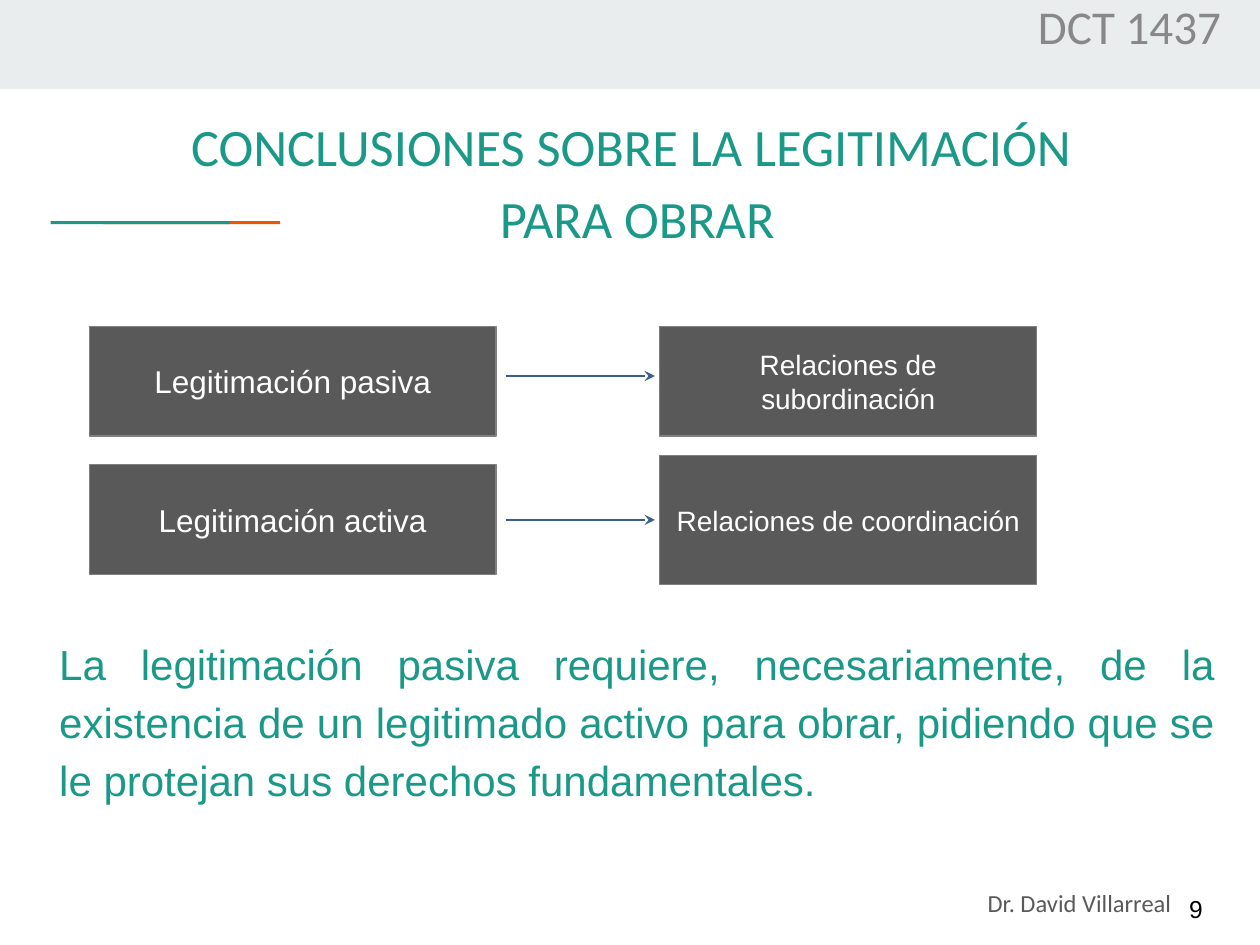
from lxml.etree import SubElement
from pptx import Presentation
from pptx.dml.color import RGBColor
from pptx.enum.shapes import MSO_CONNECTOR, MSO_SHAPE
from pptx.enum.text import MSO_ANCHOR, MSO_AUTO_SIZE, PP_ALIGN
from pptx.oxml.ns import qn
from pptx.util import Cm, Pt

TEAL = RGBColor(0x1A, 0x99, 0x88)
ORANGE = RGBColor(0xEB, 0x56, 0x00)
BAND = RGBColor(0xE9, 0xED, 0xEE)
DARK = RGBColor(0x59, 0x59, 0x59)
OUTLINE = RGBColor(0x80, 0x80, 0x80)
HEADER = RGBColor(0x88, 0x88, 0x88)
ARROW = RGBColor(0x39, 0x5E, 0x89)
WHITE = RGBColor(0xFF, 0xFF, 0xFF)
BLACK = RGBColor(0x00, 0x00, 0x00)


def add_rectangle(left, top, width, height, color):
    box = page.shapes.add_shape(
        MSO_SHAPE.RECTANGLE, Cm(left), Cm(top), Cm(width), Cm(height))
    box.shadow.inherit = False
    box.fill.solid()
    box.fill.fore_color.rgb = color
    box.line.fill.background()
    return box


def write(box, lines, font, size, color, align, anchor=MSO_ANCHOR.TOP, spacing=1.0):
    frame = box.text_frame
    frame.word_wrap = True
    frame.auto_size = MSO_AUTO_SIZE.NONE
    frame.vertical_anchor = anchor
    for index, line in enumerate(lines):
        para = frame.add_paragraph() if index else frame.paragraphs[0]
        para.alignment = align
        para.line_spacing = spacing
        para.space_before = Pt(0)
        span = para.add_run()
        span.text = line
        span.font.name = font
        span.font.size = Pt(size)
        span.font.color.rgb = color


deck = Presentation()
deck.slide_width, deck.slide_height = Cm(25.4), Cm(19.05)
page = deck.slides.add_slide(deck.slide_layouts[1])

add_rectangle(0, 0, 25.4, 1.8, BAND)
add_rectangle(2.08, 4.46, 3.57, 0.06, ORANGE)
add_rectangle(1.02, 4.46, 3.62, 0.06, TEAL)

title = page.shapes.title
title.left, title.top, title.width, title.height = Cm(1.6), Cm(2.57), Cm(22.5), Cm(1.98)
write(title, ["CONCLUSIONES SOBRE LA LEGITIMACIÓN ", "PARA OBRAR"],
      "Calibri", 30, TEAL, PP_ALIGN.CENTER, MSO_ANCHOR.MIDDLE, 1.15)

body = page.placeholders[1]
body.left, body.top, body.width, body.height = Cm(0.94), Cm(12.6), Cm(23.8), Cm(10.34)
write(body, ["La legitimación pasiva requiere, necesariamente, de la existencia de un "
             "legitimado activo para obrar, pidiendo que se le protejan sus derechos "
             "fundamentales."],
      "Arial", 24, TEAL, PP_ALIGN.JUSTIFY, spacing=1.15)
properties = body.text_frame.paragraphs[0]._p.get_or_add_pPr()
properties.set("marL", "0")
properties.set("indent", "0")
SubElement(properties, qn("a:buNone"))

concepts = [
    ("Legitimación pasiva", 1.8, 6.58, 8.2, 2.21, 18),
    ("Legitimación activa", 1.8, 9.37, 8.2, 2.21, 18),
    ("Relaciones de subordinación", 13.3, 6.58, 7.6, 2.21, 16),
    ("Relaciones de coordinación", 13.3, 9.18, 7.6, 2.6, 16),
]
for text, left, top, width, height, size in concepts:
    concept = add_rectangle(left, top, width, height, DARK)
    concept.line.color.rgb = OUTLINE
    concept.line.width = Pt(0.75)
    write(concept, [text], "Arial", size, WHITE, PP_ALIGN.CENTER, MSO_ANCHOR.MIDDLE)

for level in (7.58, 10.48):
    arrow = page.shapes.add_connector(
        MSO_CONNECTOR.STRAIGHT, Cm(10.2), Cm(level), Cm(13.2), Cm(level))
    arrow.line.color.rgb = ARROW
    arrow.line.width = Pt(0.75)
    SubElement(arrow.line._get_or_add_ln(), qn("a:tailEnd"), type="stealth")
    SubElement(arrow._element.spPr, qn("a:effectLst"))

labels = [
    ("9", 23.72, 17.6, 1.52, 1.45, "Arial", 14, BLACK, PP_ALIGN.LEFT, MSO_ANCHOR.MIDDLE, 1.0),
    ("DCT 1437", 19.58, 0.05, 6.38, 1.45, "Calibri", 26.9, HEADER, PP_ALIGN.CENTER,
     MSO_ANCHOR.TOP, 0.8),
    ("Dr. David Villarreal", 19.66, 17.78, 6.58, 0.76, "Calibri", 14, DARK, PP_ALIGN.LEFT,
     MSO_ANCHOR.TOP, 1.0),
]
for text, left, top, width, height, *style in labels:
    label = page.shapes.add_textbox(Cm(left), Cm(top), Cm(width), Cm(height))
    write(label, [text], *style)

deck.save("out.pptx")
